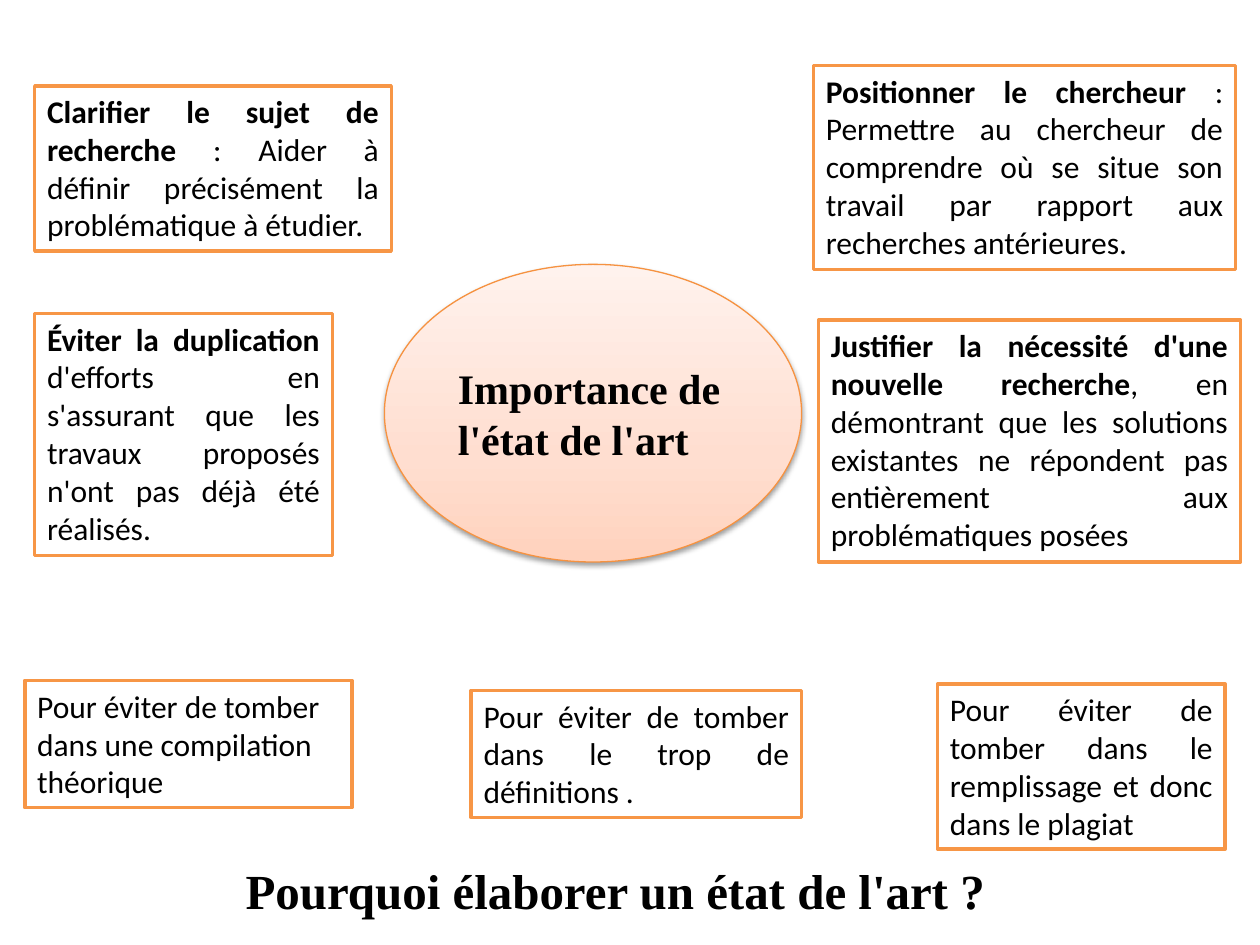
from lxml import etree
from pptx import Presentation, util as u
from pptx.dml.color import RGBColor
from pptx.enum import shapes, text
from pptx.oxml import ns

BLACK = RGBColor(0x00, 0x00, 0x00)
WHITE = RGBColor(0xFF, 0xFF, 0xFF)
ORANGE = RGBColor(0xF7, 0x96, 0x46)
RIM = RGBColor(0xF6, 0x92, 0x40)
PEACH = ((0, RGBColor(0xFF, 0xD2, 0xBD)),
         (35, RGBColor(0xFF, 0xDE, 0xD0)),
         (100, RGBColor(0xFF, 0xF2, 0xED)))

BODY = {"name": "Calibri", "size": u.Pt(18)}
TITLE = {"name": "Times New Roman", "size": u.Pt(28), "bold": True}
CENTRE = {**TITLE, "size": u.Pt(24)}

LEFT, JUSTIFY = text.PP_ALIGN.LEFT, text.PP_ALIGN.JUSTIFY


def write(paragraph, words, font_format):
    run = paragraph.add_run()
    run.text = words
    run.font.color.rgb = BLACK
    for key, value in font_format.items():
        setattr(run.font, key, value)


def add_child(parent, tag, **attributes):
    child = etree.SubElement(parent, ns.qn(tag))
    for key, value in attributes.items():
        child.set(key, str(value))
    return child


deck = Presentation()
deck.slide_width, deck.slide_height = u.Cm(25.4), u.Cm(19.05)
slide = deck.slides.add_slide(deck.slide_layouts[6])

# Central theme: gradient ellipse with a soft shadow below
theme = slide.shapes.add_shape(shapes.MSO_SHAPE.OVAL,
                               u.Cm(7.75), u.Cm(5.33), u.Cm(8.41), u.Cm(6))
theme.fill.gradient()
theme.line.color.rgb = RIM
theme.line.width = u.Pt(0.75)
theme.shadow.inherit = False

properties = theme.element.spPr
stops = properties.find(".//" + ns.qn("a:gsLst"))
for old_stop in list(stops):
    stops.remove(old_stop)
for percent, colour in PEACH:
    stop = add_child(stops, "a:gs", pos=percent * 1000)
    add_child(stop, "a:srgbClr", val=colour)
direction = properties.find(".//" + ns.qn("a:lin"))
direction.set("ang", str(270 * 60000))
direction.set("scaled", "0")

shadow = add_child(properties.find(ns.qn("a:effectLst")), "a:outerShdw",
                   blurRad=u.Pt(3.1), dist=u.Pt(1.6), dir=90 * 60000, rotWithShape=0)
shadow_colour = add_child(shadow, "a:srgbClr", val=BLACK)
add_child(shadow_colour, "a:alpha", val=38000)

theme.text_frame.vertical_anchor = text.MSO_ANCHOR.MIDDLE
theme_line = theme.text_frame.paragraphs[0]
theme_line.alignment = LEFT
write(theme_line, "Importance de l'état de l'art", CENTRE)

# Reasons around the theme: left, top, width, height, alignment, bold lead, rest
REASONS = (
    (0.7, 1.73, 7.19, 3.33, JUSTIFY, "Clarifier le sujet de recherche",
     " : Aider à définir précisément la problématique à étudier."),
    (16.4, 1.32, 8.51, 4.11, JUSTIFY, "Positionner le chercheur",
     " : Permettre au chercheur de comprendre où se situe son travail "
     "par rapport aux recherches antérieures."),
    (0.7, 6.32, 6, 4.88, JUSTIFY, "Éviter la duplication",
     " d'efforts en s'assurant que les travaux proposés n'ont pas déjà été réalisés."),
    (16.5, 6.45, 8.51, 4.88, JUSTIFY, "Justifier la nécessité d'une nouvelle recherche",
     ", en démontrant que les solutions existantes ne répondent pas "
     "entièrement aux problématiques posées"),
    (0.5, 13.72, 6.6, 2.56, LEFT, "",
     "Pour éviter de tomber dans une compilation théorique"),
    (9.5, 13.92, 6.66, 2.56, JUSTIFY, "",
     "Pour éviter de tomber dans le trop de définitions ."),
    (18.9, 13.79, 5.8, 3.33, JUSTIFY, "",
     "Pour éviter de tomber dans le remplissage et donc dans le plagiat "),
)
for *place, alignment, lead, rest in REASONS:
    reason = slide.shapes.add_shape(shapes.MSO_SHAPE.RECTANGLE, *map(u.Cm, place))
    reason.shadow.inherit = False
    reason.fill.solid()
    reason.fill.fore_color.rgb = WHITE
    reason.line.color.rgb = ORANGE
    reason.line.width = u.Pt(2)
    frame = reason.text_frame
    frame_format = {"word_wrap": True, "vertical_anchor": text.MSO_ANCHOR.TOP,
                    "auto_size": text.MSO_AUTO_SIZE.SHAPE_TO_FIT_TEXT}
    for key, value in frame_format.items():
        setattr(frame, key, value)
    sentence = frame.paragraphs[0]
    sentence.alignment = alignment
    if lead:
        write(sentence, lead, {**BODY, "bold": True})
    write(sentence, rest, BODY)

# Question at the foot of the slide
question = slide.shapes.add_textbox(u.Cm(4.7), u.Cm(17.22), u.Cm(15.6), u.Cm(1.45))
question.text_frame.word_wrap = False
question.text_frame.auto_size = text.MSO_AUTO_SIZE.SHAPE_TO_FIT_TEXT
write(question.text_frame.paragraphs[0], "Pourquoi élaborer un état de l'art ?", TITLE)

deck.save("out.pptx")
